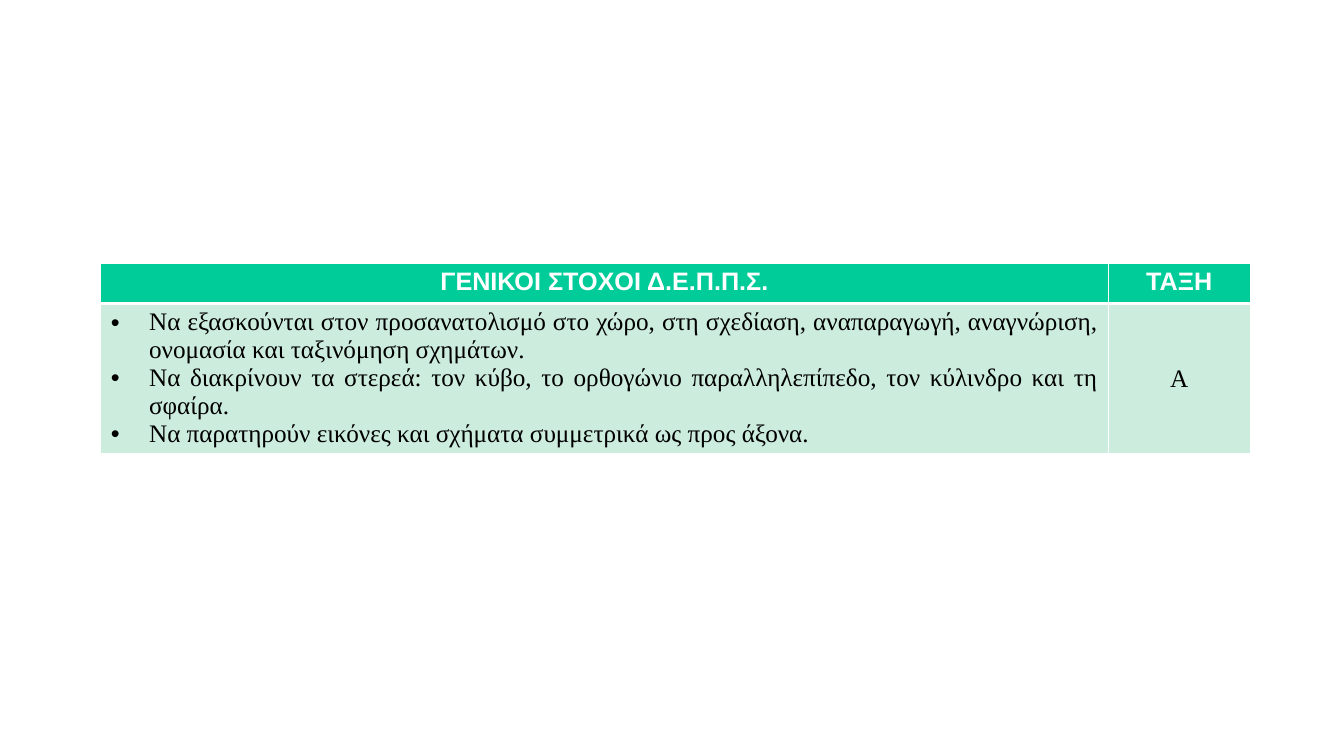
from dataclasses import dataclass

from lxml import etree
from pptx import Presentation
from pptx.dml.color import RGBColor
from pptx.enum.text import MSO_ANCHOR, PP_ALIGN
from pptx.oxml.ns import qn
from pptx.util import Pt

CENTER, JUSTIFY = PP_ALIGN.CENTER, PP_ALIGN.JUSTIFY
TOP, MIDDLE = MSO_ANCHOR.TOP, MSO_ANCHOR.MIDDLE
BLANK_LAYOUT = 6
PX = 9144


@dataclass(frozen=True)
class Theme:
    header_fill: str = "00CC99"
    body_fill: str = "CCECDE"
    header_text: str = "FFFFFF"
    body_text: str = "000000"
    border: str = "FFFFFF"
    header_font: str = "Arial"
    body_font: str = "Times New Roman"
    size: int = 18
    thin: int = 1
    thick: int = 3


THEME = Theme()
HEADERS = ["ΓΕΝΙΚΟΙ ΣΤΟΧΟΙ Δ.Ε.Π.Π.Σ.", "ΤΑΞΗ"]
GOALS = [
    "Να εξασκούνται στον προσανατολισμό στο χώρο, στη σχεδίαση, αναπαραγωγή, "
    "αναγνώριση, ονομασία και ταξινόμηση σχημάτων.",
    "Να διακρίνουν τα στερεά: τον κύβο, το ορθογώνιο παραλληλεπίπεδο, "
    "τον κύλινδρο και τη σφαίρα.",
    "Να παρατηρούν εικόνες και σχήματα συμμετρικά ως προς άξονα.",
]
GRADE = "Α"


def px(n):
    return n * PX


def set_borders(cell, top, bottom):
    tc_pr = cell._tc.get_or_add_tcPr()
    widths = {"lnL": THEME.thin, "lnR": THEME.thin, "lnT": top, "lnB": bottom}
    for i, (side, width) in enumerate(widths.items()):
        ln = etree.Element(qn(f"a:{side}"), w=str(Pt(width)))
        fill = etree.SubElement(ln, qn("a:solidFill"))
        etree.SubElement(fill, qn("a:srgbClr"), val=THEME.border)
        tc_pr.insert(i, ln)


def add_bullet(p, indent):
    p_pr = p._p.get_or_add_pPr()
    p_pr.set("marL", str(px(indent)))
    p_pr.set("indent", str(-px(indent)))
    etree.SubElement(p_pr, qn("a:buFont"), typeface=THEME.header_font)
    etree.SubElement(p_pr, qn("a:buChar"), char="•")


def fill_cell(cell, lines, header=False, align=CENTER, anchor=TOP, indent=0):
    cell.fill.solid()
    cell.fill.fore_color.rgb = RGBColor.from_string(
        THEME.header_fill if header else THEME.body_fill)
    cell.vertical_anchor = anchor
    tf = cell.text_frame
    for i, line in enumerate(lines):
        p = tf.add_paragraph() if i else tf.paragraphs[0]
        p.alignment = align
        if indent:
            add_bullet(p, indent)
        r = p.add_run()
        r.text = line
        r.font.name = THEME.header_font if header else THEME.body_font
        r.font.size = Pt(THEME.size)
        r.font.bold = header
        r.font.color.rgb = RGBColor.from_string(
            THEME.header_text if header else THEME.body_text)
    if header:
        set_borders(cell, THEME.thin, THEME.thick)
    else:
        set_borders(cell, THEME.thick, THEME.thin)


def add_goals_table(s, left, top, width, height):
    grade_width, header_height = 141, 40
    table = s.shapes.add_table(
        2, 2, px(left), px(top), px(width), px(height)).table
    table.columns[0].width = px(width - grade_width)
    table.columns[1].width = px(grade_width)
    table.rows[0].height = px(header_height)
    table.rows[1].height = px(height - header_height)
    for col, header in enumerate(HEADERS):
        fill_cell(table.cell(0, col), [header], header=True)
    fill_cell(table.cell(1, 0), GOALS, align=JUSTIFY, indent=38)
    fill_cell(table.cell(1, 1), [GRADE], anchor=MIDDLE)


def main():
    prs = Presentation()
    prs.slide_width, prs.slide_height = px(1334), px(750)
    s = prs.slides.add_slide(prs.slide_layouts[BLANK_LAYOUT])
    add_goals_table(s, 100, 261, 1141, 189)
    prs.save("out.pptx")


if __name__ == "__main__":
    main()
